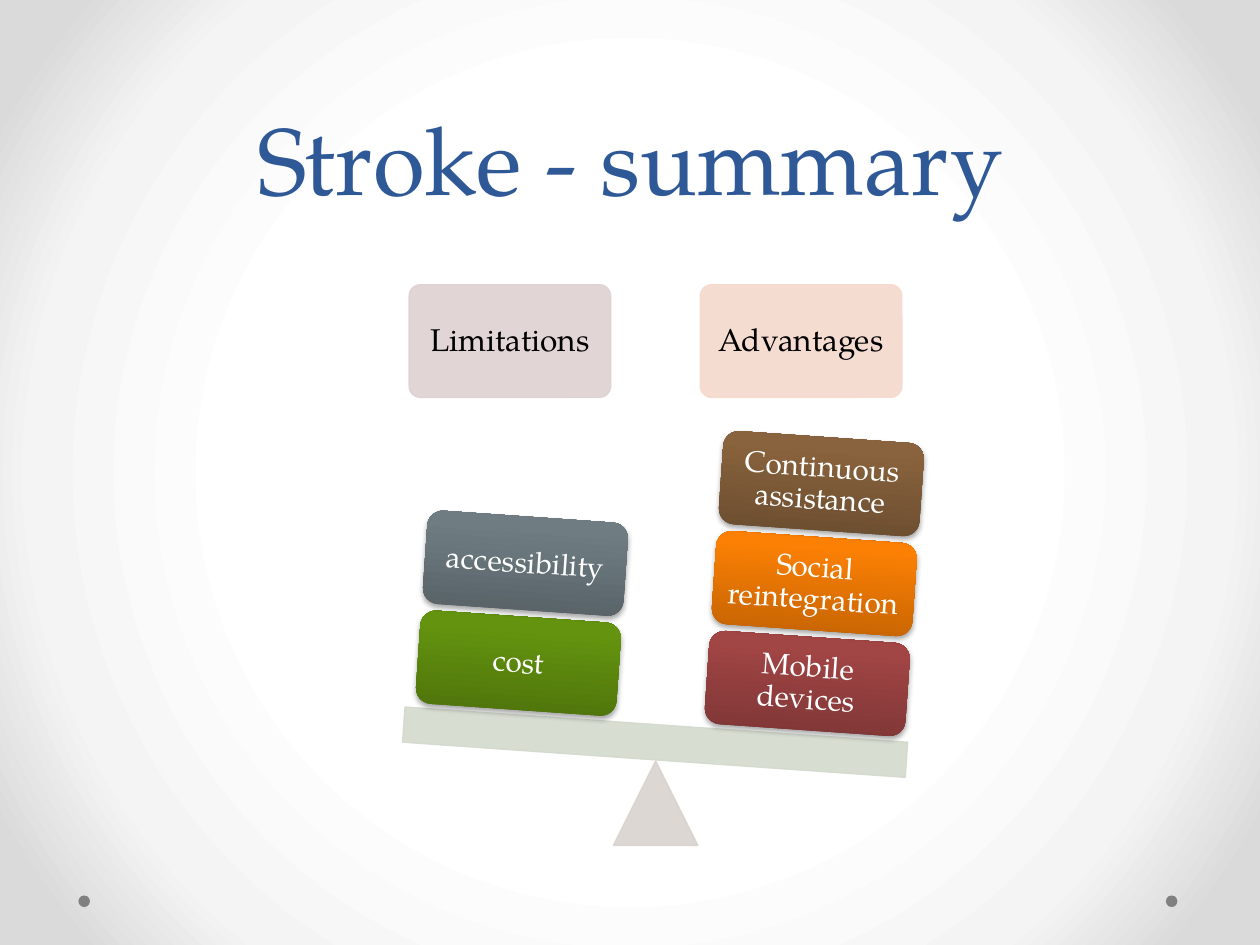
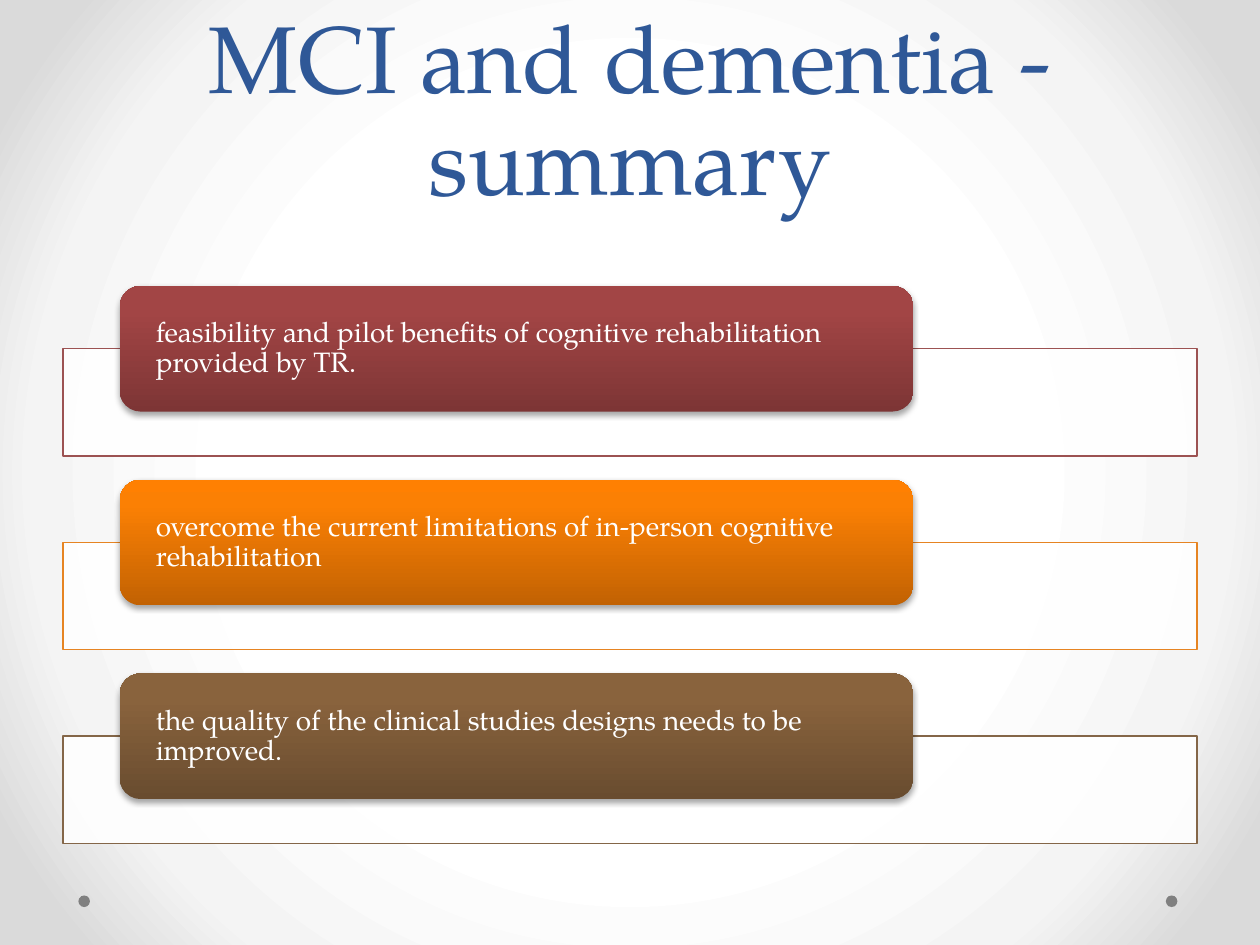
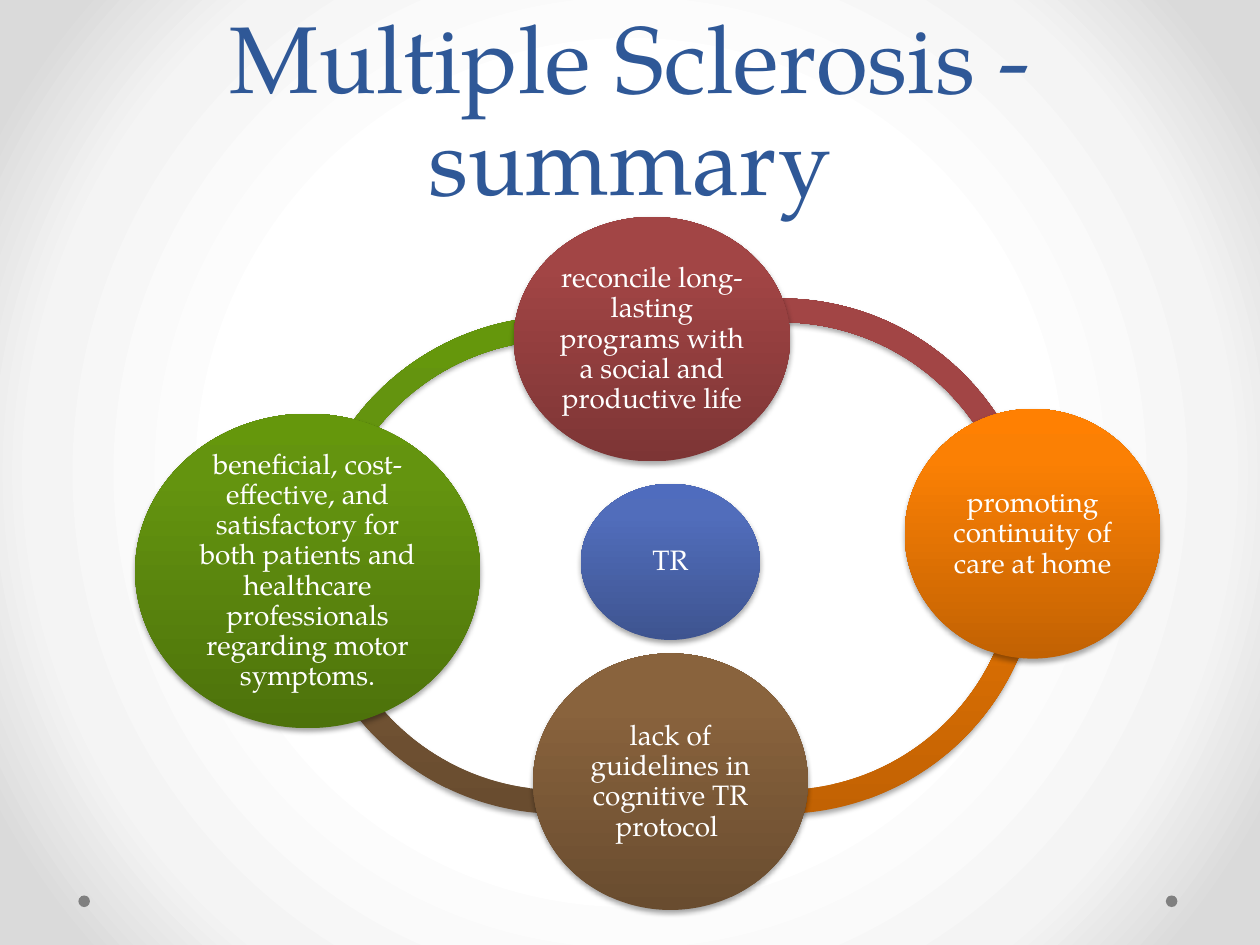
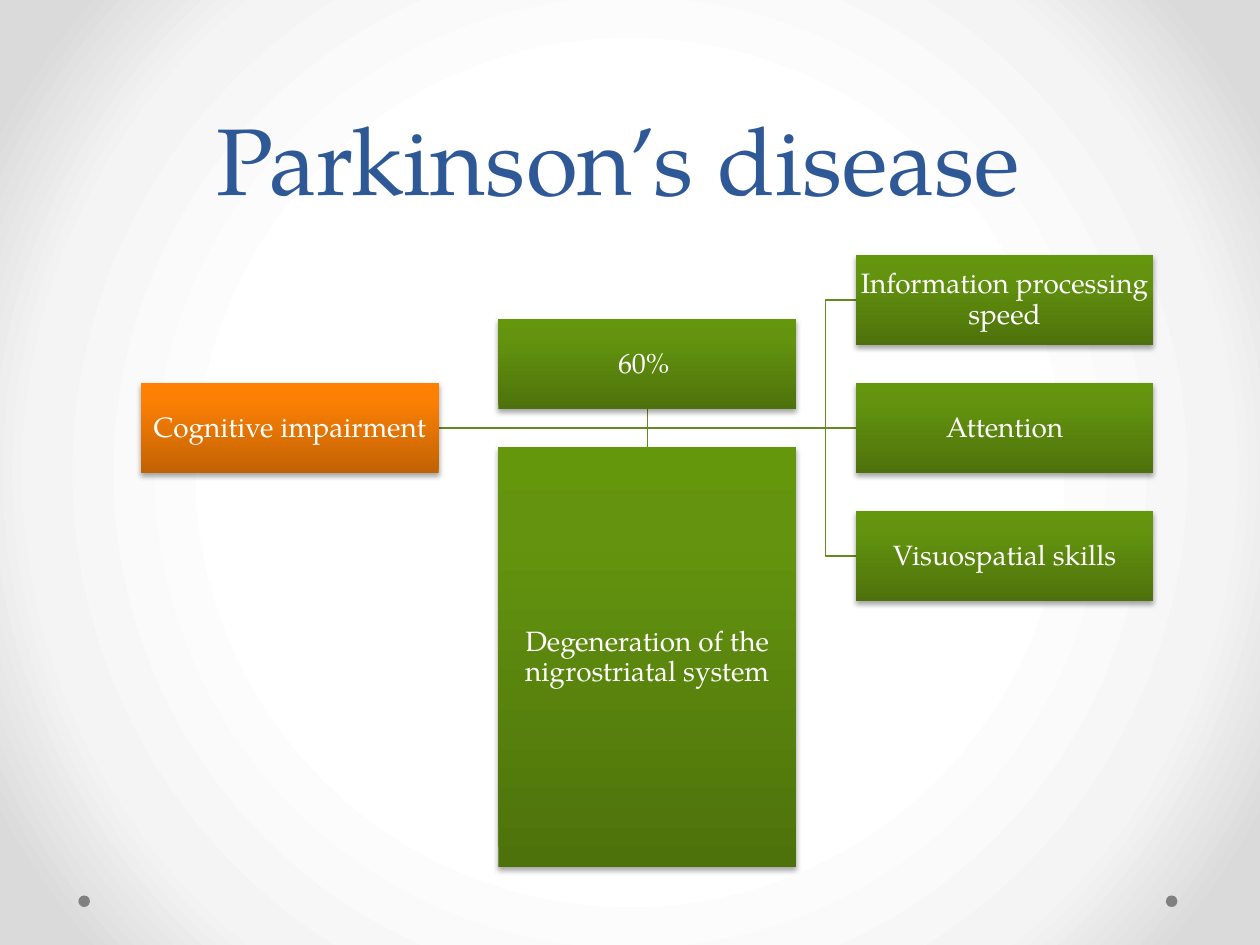
from dataclasses import dataclass
from typing import Any, Optional

from lxml.etree import SubElement
from pptx import Presentation
from pptx.dml.color import RGBColor
from pptx.enum.shapes import MSO_CONNECTOR as Connector, MSO_SHAPE as Preset
from pptx.enum.text import MSO_ANCHOR as Anchor, MSO_AUTO_SIZE as AutoSize, PP_ALIGN as Align
from pptx.oxml.ns import qn
from pptx.util import Pt

FONT = "TeX Gyre Pagella"
TITLE_COLOR, WHITE, BLACK, DOT_GREY = "2F5897", "FFFFFF", "000000", "808080"
TREE_LINE = "63891F"
UPWARD = 270

# Gradient stops, as percent and colour
Stops = tuple[tuple[int, str], ...]
BACKGROUND: Stops = ((50, "FFFFFF"), (76, "F4F4F4"), (92, "DADADA"))
RED: Stops = ((0, "7D3535"), (80, "A24545"), (100, "A44343"))
ORANGE: Stops = ((0, "C26203"), (80, "FB8004"), (100, "FF8002"))
BROWN: Stops = ((0, "694C2F"), (80, "89633D"), (100, "8B633C"))
GREEN: Stops = ((0, "4D720B"), (80, "64940F"), (100, "65970C"))
SLATE: Stops = ((0, "566065"), (80, "6F7D83"), (100, "6F7E84"))
BLUE: Stops = ((0, "3E5490"), (80, "516DBB"), (100, "4F6CBE"))


@dataclass(frozen=True)
class Box:
    left: float
    top: float
    width: float
    height: float

    def lengths(self) -> list[int]:
        return [Pt(value) for value in (self.left, self.top, self.width, self.height)]


@dataclass(frozen=True)
class TextStyle:
    size: float
    inset_x: float
    inset_y: float
    color: str = WHITE
    align: Align = Align.CENTER


@dataclass(frozen=True)
class Node:
    """A glossy shape with its own text."""
    text: str
    box: Box
    stops: Stops


@dataclass(frozen=True)
class Arc:
    """A ring segment, running clockwise between two angles in degrees."""
    left: float
    top: float
    start: float
    end: float
    stops: Stops


HEADER_TEXT = TextStyle(18, 5, 5, BLACK)
BLOCK_TEXT = TextStyle(17, 5, 5)
BAR_TEXT = TextStyle(16, 17.15, 0, align=Align.LEFT)
CIRCLE_TEXT = TextStyle(16, 1.6, 1.6)
TREE_TEXT = TextStyle(16, 0.8, 0.8)


def color(value: str) -> RGBColor:
    return RGBColor.from_string(value)


def apply(target: Any, values: dict[str, Any]) -> None:
    for name, value in values.items():
        setattr(target, name, value)


def add_color(parent: Any, value: str, opacity: Optional[int] = None) -> None:
    element = SubElement(parent, qn("a:srgbClr"), val=value)
    if opacity is not None:
        SubElement(element, qn("a:alpha"), val=str(opacity * 1000))


def set_gradient(fill: Any, properties: Any, stops: Stops, angle: Optional[int] = None) -> None:
    """Fill along an angle, or from the centre when there is none."""
    fill.solid()
    solid = properties.find(qn("a:solidFill"))
    gradient = properties.makeelement(qn("a:gradFill"), {"rotWithShape": "1"})
    properties.replace(solid, gradient)
    stop_list = SubElement(gradient, qn("a:gsLst"))
    for percent, value in stops:
        add_color(SubElement(stop_list, qn("a:gs"), pos=str(percent * 1000)), value)
    if angle is None:
        circle = SubElement(gradient, qn("a:path"), path="circle")
        SubElement(circle, qn("a:fillToRect"), dict.fromkeys("ltrb", "50000"))
    else:
        SubElement(gradient, qn("a:lin"), ang=str(angle * 60000), scaled="0")


def set_solid(fill: Any, value: str, opacity: int = 100) -> None:
    fill.solid()
    fill.fore_color.rgb = color(value)
    if opacity < 100:
        # The private wrapper gives the colour element for fills of shapes and lines
        element = fill._xPr.find(qn("a:solidFill")).find(qn("a:srgbClr"))
        SubElement(element, qn("a:alpha"), val=str(opacity * 1000))


def add_flat(slide: Any, preset: Preset, box: Box, fill: str, opacity: int = 100,
             line: Optional[str] = None, line_opacity: int = 100) -> Any:
    shape = slide.shapes.add_shape(preset, *box.lengths())
    shape.shadow.inherit = False
    set_solid(shape.fill, fill, opacity)
    if line is None:
        shape.line.fill.background()
    else:
        set_solid(shape.line.fill, line, line_opacity)
        shape.line.width = Pt(0.75)
    return shape


def add_glossy(slide: Any, preset: Preset, box: Box, stops: Stops) -> Any:
    shape = slide.shapes.add_shape(preset, *box.lengths())
    properties = shape.element.spPr
    set_gradient(shape.fill, properties, stops, UPWARD)
    shape.line.fill.background()
    shape.shadow.inherit = False
    shadow = SubElement(properties.find(qn("a:effectLst")), qn("a:outerShdw"), {
        "blurRad": str(Pt(3.1)), "dist": str(Pt(1.8)), "dir": str(90 * 60000), "rotWithShape": "0"})
    add_color(shadow, BLACK, 35)
    return shape


def write_text(shape: Any, text: str, style: TextStyle) -> None:
    frame = shape.text_frame
    apply(frame, {
        "word_wrap": True, "vertical_anchor": Anchor.MIDDLE,
        "margin_left": Pt(style.inset_x), "margin_right": Pt(style.inset_x),
        "margin_top": Pt(style.inset_y), "margin_bottom": Pt(style.inset_y)})
    paragraph = frame.paragraphs[0]
    apply(paragraph, {"alignment": style.align, "line_spacing": 0.9,
                      "space_after": Pt(0.35 * style.size)})
    run = paragraph.add_run()
    run.text = text
    apply(run.font, {"name": FONT, "size": Pt(style.size)})
    run.font.color.rgb = color(style.color)


def add_node(slide: Any, preset: Preset, node: Node, style: TextStyle) -> Any:
    shape = add_glossy(slide, preset, node.box, node.stops)
    write_text(shape, node.text, style)
    return shape


def add_titled_slide(presentation: Any, text: str) -> Any:
    slide = presentation.slides.add_slide(presentation.slide_layouts[5])
    title = slide.shapes.title
    left, top, width, height = Box(36, 0, 648, 126).lengths()
    apply(title, {"left": left, "top": top, "width": width, "height": height})
    apply(title.text_frame, {"vertical_anchor": Anchor.BOTTOM, "word_wrap": True,
                             "auto_size": AutoSize.NONE})
    paragraph = title.text_frame.paragraphs[0]
    apply(paragraph, {"alignment": Align.CENTER, "line_spacing": Pt(58)})
    run = paragraph.add_run()
    run.text = text
    apply(run.font, {"name": FONT, "size": Pt(54)})
    run.font.color.rgb = color(TITLE_COLOR)
    return slide


def decorate_master(master: Any, slide: Any) -> None:
    """Set the shared background and move two footer dots to the master."""
    background = master.background.fill
    set_gradient(background, background._xPr, BACKGROUND)
    for number, left in enumerate((666.2, 44.8), start=20):
        dot = add_flat(slide, Preset.OVAL, Box(left, 511.7, 6.6, 6.6), DOT_GREY)
        dot.element.nvSpPr.cNvPr.id = number
        master.shapes.element.append(dot.element)


def draw_balance(slide: Any) -> None:
    tilt = 4
    column_gap = 166.4
    for column, (text, tint) in enumerate((("Limitations", "DED1D1"), ("Advantages", "F5D9CD"))):
        box = Box(233.8 + column * column_gap, 162.7, 115.2, 64.4)
        header = add_flat(slide, Preset.ROUNDED_RECTANGLE, box, tint, 90, tint, 90)
        header.adjustments[0] = 0.1
        write_text(header, text, HEADER_TEXT)

    add_flat(slide, Preset.ISOSCELES_TRIANGLE, Box(350.5, 434.8, 48.3, 48.3),
             "D9D3CF", 90, "D9D3CF", 90)
    beam = add_flat(slide, Preset.RECTANGLE, Box(230.4, 414, 288, 20.2),
                    "D3DACD", 90, "D3DACD", 90)
    beam.rotation = tilt

    stacks = (
        (403.9, 363.9, (("Mobile devices", RED), ("Social reintegration", ORANGE),
                        ("Continuous assistance", BROWN))),
        (238.8, 352.3, (("cost", GREEN), ("accessibility", SLATE))),
    )
    for left, top, blocks in stacks:
        for level, (text, stops) in enumerate(blocks):
            box = Box(left + 4 * level, top - 57.1 * level, 114.9, 53.4)
            block = add_node(slide, Preset.ROUNDED_RECTANGLE, Node(text, box, stops), BLOCK_TEXT)
            block.rotation = tilt


def draw_findings(slide: Any) -> None:
    findings = (
        ("feasibility and pilot benefits of cognitive rehabilitation provided by TR.", RED, "9C5252"),
        ("overcome the current limitations of in-person cognitive rehabilitation", ORANGE, "E68422"),
        ("the quality of the clinical studies designs needs to be improved.", BROWN, "846648"),
    )
    for row, (text, stops, outline) in enumerate(findings):
        offset = 110.7 * row
        add_flat(slide, Preset.RECTANGLE, Box(36, 199.2 + offset, 648, 61.4), WHITE, 90, outline)
        bar = Node(text, Box(68.4, 163.4 + offset, 453.6, 71.8), stops)
        add_node(slide, Preset.ROUNDED_RECTANGLE, bar, BAR_TEXT)


def draw_cycle(slide: Any) -> None:
    arc_size, ring_width = 295.2, 13.58
    arcs = (
        Arc(172.8, 180.7, 180.75, 291.43, GREEN),
        Arc(172.1, 169.9, 63.89, 176.43, BROWN),
        Arc(298.8, 169.9, 355.26, 115.96, ORANGE),
        Arc(298.8, 170.6, 239.25, 354.97, RED),
    )
    for arc in arcs:
        shape = add_glossy(slide, Preset.BLOCK_ARC,
                           Box(arc.left, arc.top, arc_size, arc_size), arc.stops)
        # Adjustments count in 100000ths, angles in 60000ths of a degree
        for index, value in enumerate((arc.start * 0.6, arc.end * 0.6, ring_width / arc_size)):
            shape.adjustments[index] = value

    circles = (
        Node("TR", Box(331.9, 276.5, 102.3, 89.2), BLUE),
        Node("reconcile long-lasting programs with a social and productive life",
             Box(293.6, 124, 157.9, 139.7), RED),
        Node("promoting continuity of care at home", Box(517, 233.7, 146.2, 142.7), ORANGE),
        Node("lack of guidelines in cognitive TR protocol ", Box(304.6, 373.4, 157.1, 146.6), BROWN),
        Node("beneficial, cost-effective, and satisfactory for both patients and healthcare "
             "professionals regarding motor symptoms.", Box(77.2, 236.4, 197.2, 179.7), GREEN),
    )
    for circle in circles:
        add_node(slide, Preset.OVAL, circle, CIRCLE_TEXT)


def add_branch(slide: Any, points: list[tuple[float, float]]) -> None:
    start, *others = [(Pt(x), Pt(y)) for x, y in points]
    if len(points) == 2:
        branch = slide.shapes.add_connector(Connector.STRAIGHT, *start, *others[0])
        SubElement(branch.element.spPr, qn("a:effectLst"))
    else:
        builder = slide.shapes.build_freeform(*start)
        builder.add_line_segments(others, close=False)
        branch = builder.convert_to_shape()
        branch.fill.background()
        branch.shadow.inherit = False
    branch.line.width = Pt(0.75)
    branch.line.color.rgb = color(TREE_LINE)


def draw_tree(slide: Any) -> None:
    width, height, row_gap = 170.1, 51.6, 73.2
    root_left, middle_left, leaf_left = (80.6 + 204.2 * column for column in range(3))
    root_top = 218.8
    axis = root_top + height / 2
    start = (root_left + width, axis)
    center, bend = middle_left + width / 2, leaf_left - 17.2
    above, below = root_top - row_gap / 2, root_top + row_gap / 2

    for end in (below, above + height):
        add_branch(slide, [start, (center, axis), (center, end)])
    for end in (axis + row_gap, axis, axis - row_gap):
        corners = [] if end == axis else [(bend, axis), (bend, end)]
        add_branch(slide, [start, *corners, (leaf_left, end)])

    nodes = [Node("Cognitive impairment", Box(root_left, root_top, width, height), ORANGE)]
    for row, text in enumerate(("Information processing speed", "Attention", "Visuospatial skills")):
        nodes.append(Node(text, Box(leaf_left, root_top + row_gap * (row - 1), width, height), GREEN))
    nodes += [
        Node("60% ", Box(middle_left, above, width, height), GREEN),
        Node("Degeneration of the nigrostriatal system",
             Box(middle_left, below, width, 240.2), GREEN),
    ]
    for node in nodes:
        add_node(slide, Preset.RECTANGLE, node, TREE_TEXT)


def main() -> None:
    presentation = Presentation()
    apply(presentation, {"slide_width": Pt(720), "slide_height": Pt(540)})
    pages = (
        ("Stroke - summary", draw_balance),
        ("MCI and dementia - summary", draw_findings),
        ("Multiple Sclerosis - summary", draw_cycle),
        ("Parkinson’s disease ", draw_tree),
    )
    for title, draw in pages:
        draw(add_titled_slide(presentation, title))
    decorate_master(presentation.slide_master, presentation.slides[0])
    presentation.save("out.pptx")


if __name__ == "__main__":
    main()
